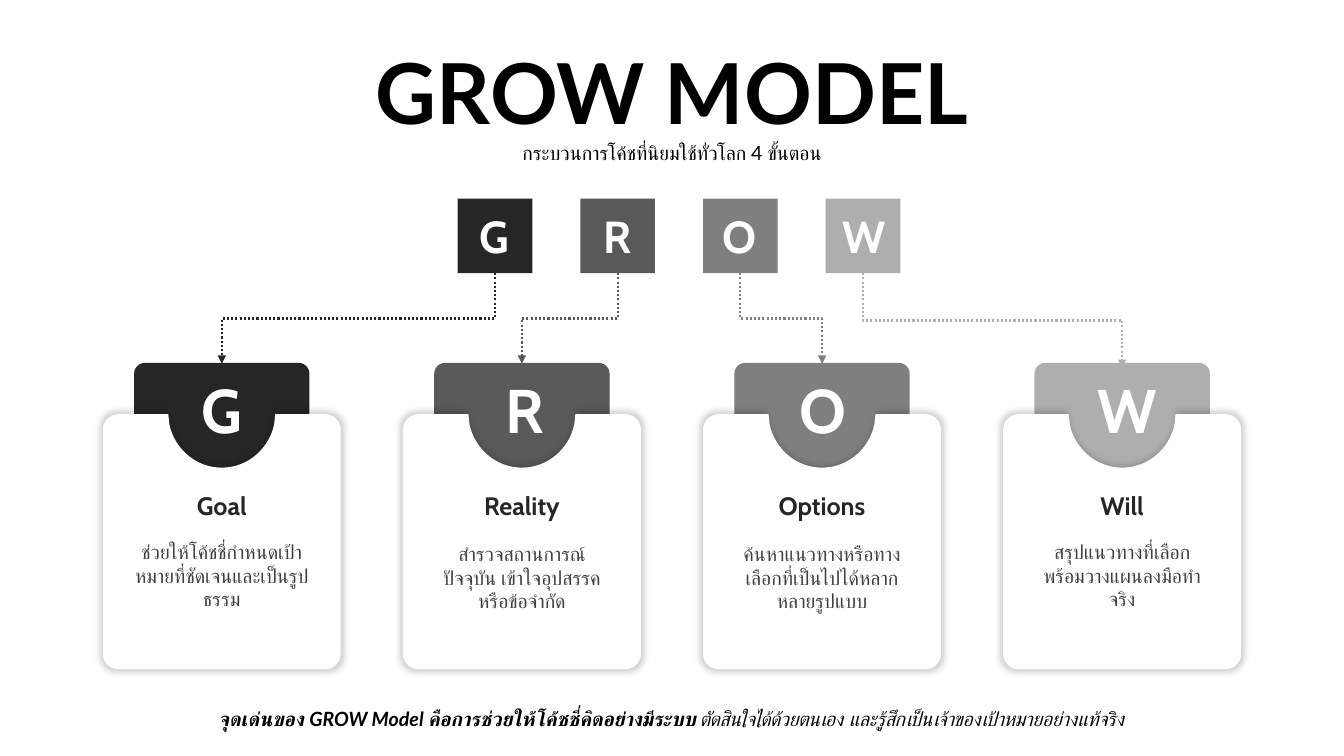
from lxml import etree
from pptx import Presentation
from pptx.dml.color import RGBColor
from pptx.enum.dml import MSO_LINE
from pptx.enum.lang import MSO_LANGUAGE_ID
from pptx.enum.shapes import MSO_CONNECTOR, MSO_SHAPE
from pptx.enum.text import MSO_AUTO_SIZE, PP_ALIGN
from pptx.oxml.ns import qn
from pptx.util import Inches, Pt

RECT, ROUNDED = MSO_SHAPE.RECTANGLE, MSO_SHAPE.ROUNDED_RECTANGLE
ELBOW, DOTTED = MSO_CONNECTOR.ELBOW, MSO_LINE.ROUND_DOT
CENTER, GROW = PP_ALIGN.CENTER, MSO_AUTO_SIZE.SHAPE_TO_FIT_TEXT
THAI = MSO_LANGUAGE_ID.THAI

# Content: letter, name, description, shade, top of description, arrow end, letter shift
STAGES = [
    ("G", "Goal", "ช่วยให้โค้ชชี่กำหนดเป้าหมายที่ชัดเจนและเป็นรูปธรรม", "262626", 5.31, 3.61, 0),
    ("R", "Reality", "สำรวจสถานการณ์ปัจจุบัน เข้าใจอุปสรรคหรือข้อจำกัด", "595959", 5.33, 3.61, 0.02),
    ("O", "Options", "ค้นหาแนวทางหรือทางเลือกที่เป็นไปได้หลากหลายรูปแบบ", "7F7F7F", 5.33, 3.61, 0),
    ("W", "Will", "สรุปแนวทางที่เลือก พร้อมวางแผนลงมือทำจริง", "AEAEAE", 5.31, 3.65, 0),
]
TITLE = "GROW MODEL"
SUBTITLE = "กระบวนการโค้ชที่นิยมใช้ทั่วโลก 4 ขั้นตอน"
NOTE_LEAD = "จุดเด่นของ GROW Model คือการช่วยให้โค้ชชี่คิดอย่างมีระบบ "
NOTE_REST = "ตัดสินใจได้ด้วยตนเอง และรู้สึกเป็นเจ้าของเป้าหมายอย่างแท้จริง"

THEME = {
    "head": "Cabin", "body": "Lato",
    "white": "FFFFFF", "black": "000000", "dark": "262626", "grey": "404040",
    "title": 60, "letter": 44, "tile": 32, "name": 18, "text": 14,
}

# Grid, in inches: centre of the first column and distance to the last
W, H = 13.33, 7.5
TILE_FIRST, TILE_SPAN, TILE_TOP, TILE = 4.91, 3.65, 1.97, 0.74
CARD_FIRST, CARD_SPAN, CARD_TOP, CARD_W, CARD_H = 2.2, 8.93, 4.11, 2.36, 2.53
CORNER, CORNER_PULL = 0.15, 0.07
TAB_TOP, TAB_W, TAB_H = 3.6, 1.74, 1.35


def rgb(value):
    return RGBColor.from_string(value)


def column(i, first, span):
    return first + i * span / (len(STAGES) - 1)


def add_box(shapes, kind, x, y, w, h, color):
    sp = shapes.add_shape(kind, Inches(x), Inches(y), Inches(w), Inches(h))
    sp.shadow.inherit = False
    sp.fill.solid()
    sp.fill.fore_color.rgb = rgb(color)
    sp.line.fill.background()
    return sp


def add_text(shapes, x, y, w, h, paragraphs):
    """Each paragraph is a list of (text, size, font, color, bold, italic)."""
    tf = shapes.add_textbox(Inches(x), Inches(y), Inches(w), Inches(h)).text_frame
    tf.word_wrap = True
    tf.auto_size = GROW
    for n, runs in enumerate(paragraphs):
        p = tf.add_paragraph() if n else tf.paragraphs[0]
        p.alignment = CENTER
        for text, size, font, color, bold, italic in runs:
            r = p.add_run()
            r.text = text
            r.font.language_id = THAI
            r.font.size = Pt(THEME[size])
            r.font.name = THEME[font]
            r.font.color.rgb = rgb(THEME[color])
            r.font.bold = bold
            if italic:
                r.font.italic = True


def add_arrow(shapes, x1, y1, x2, y2, color):
    """Elbow that leaves downwards: a quarter turn of the sideways one."""
    mx, my = (x1 + x2) / 2, (y1 + y2) / 2
    half_w, half_h = (y2 - y1) / 2, abs(x2 - x1) / 2
    side = 1 if x2 > x1 else -1
    c = shapes.add_connector(ELBOW, Inches(mx + side * half_w), Inches(my - half_h),
                             Inches(mx - side * half_w), Inches(my + half_h))
    c.line.color.rgb = rgb(color)
    c.line.width = Pt(1.5)
    c.line.dash_style = DOTTED
    props = c._element.spPr
    props.find(qn("a:xfrm")).set("rot", str((270 if side > 0 else 90) * 60000))
    etree.SubElement(props.find(qn("a:ln")), qn("a:tailEnd"), type="triangle")
    etree.SubElement(props, qn("a:effectLst"))


def card_outline(cx):
    """Steps of the outline: one point is a line, three points are a curve."""
    half, t, b = CARD_W / 2, CARD_TOP, CARD_TOP + CARD_H
    near, far = half - CORNER, half - CORNER_PULL
    right = [
        [(0.53, t)],
        [(near, t)],
        [(far, t), (half, t + CORNER_PULL), (half, t + CORNER)],
        [(half, b - CORNER)],
        [(half, b - CORNER_PULL), (far, b), (near, b)],
    ]
    left = [
        [(-near, b)],
        [(-far, b), (-half, b - CORNER_PULL), (-half, b - CORNER)],
        [(-half, t + CORNER)],
        [(-half, t + CORNER_PULL), (-far, t), (-near, t)],
    ]
    notch = [
        [(-0.53, t)],
        [(-0.52, t + 0.1)],
        [(-0.47, t + 0.34), (-0.26, t + 0.53), (0, t + 0.53)],
        [(0.26, t + 0.53), (0.47, t + 0.34), (0.52, t + 0.1)],
    ]
    return [[(Inches(cx + x), Inches(y)) for x, y in step] for step in notch + right + left]


def add_card(shapes, cx):
    """White rounded card with a half-round notch in its top edge."""
    start, *steps = card_outline(cx)
    fb = shapes.build_freeform(*start[0], scale=1.0)
    fb.add_line_segments([point for step in steps for point in step], close=True)
    sp = fb.convert_to_shape()
    sp.fill.solid()
    sp.fill.fore_color.rgb = rgb(THEME["white"])
    sp.line.fill.background()
    props = sp._element.spPr

    # Join each group of three points into one curve
    lines = iter(list(props.iter(qn("a:lnTo"))))
    for step in steps:
        parts = [next(lines) for _ in step]
        if len(parts) == 3:
            curve = etree.Element(qn("a:cubicBezTo"))
            parts[0].addprevious(curve)
            for part in parts:
                curve.append(part[0])
                part.getparent().remove(part)

    # Soft shadow all round
    effects = etree.SubElement(props, qn("a:effectLst"))
    shadow = etree.SubElement(effects, qn("a:outerShdw"), blurRad=str(Pt(5)), dist="0",
                              dir="0", sx="102000", sy="102000", algn="ctr",
                              rotWithShape="0")
    tone = etree.SubElement(shadow, qn("a:srgbClr"), val=THEME["black"])
    etree.SubElement(tone, qn("a:alpha"), val="20000")


def main():
    prs = Presentation()
    prs.slide_width, prs.slide_height = Inches(W), Inches(H)
    shapes = prs.slides.add_slide(prs.slide_layouts[6]).shapes

    for i, (letter, name, text, color, text_top, arrow_end, shift) in enumerate(STAGES):
        tile_x = column(i, TILE_FIRST, TILE_SPAN)
        card_x = column(i, CARD_FIRST, CARD_SPAN)

        # Letter tile and its arrow
        add_box(shapes, RECT, tile_x - TILE / 2, TILE_TOP, TILE, TILE, color)
        add_text(shapes, tile_x - 0.3, 2.02, 0.59, 0.64,
                 [[(letter, "tile", "head", "white", True, False)]])
        add_arrow(shapes, tile_x, TILE_TOP + TILE, card_x, arrow_end, color)

        # Card with its tab
        group = shapes.add_group_shape().shapes
        tab = add_box(group, ROUNDED, card_x - TAB_W / 2, TAB_TOP, TAB_W, TAB_H, color)
        tab.adjustments[0] = 0.08
        add_text(group, card_x - 0.34 + shift, 3.64, 0.69, 0.84,
                 [[(letter, "letter", "head", "white", True, False)]])
        add_card(group, card_x)
        add_text(group, card_x - 0.98, text_top, 1.96, 0.81,
                 [[(text, "text", "body", "grey", False, False)]])
        add_text(group, card_x - 0.98, 4.82, 1.96, 0.4,
                 [[(name, "name", "head", "dark", True, False)]])

    # Heading and closing note
    add_text(shapes, 0, 0.35, W, 1.35,
             [[(TITLE, "title", "body", "black", True, False)],
              [(SUBTITLE, "text", "body", "black", False, False)]])
    add_text(shapes, 0, 6.96, W, 0.34,
             [[(NOTE_LEAD, "text", "body", "black", True, True),
               (NOTE_REST, "text", "body", "black", False, True)]])

    prs.save("out.pptx")


if __name__ == "__main__":
    main()
